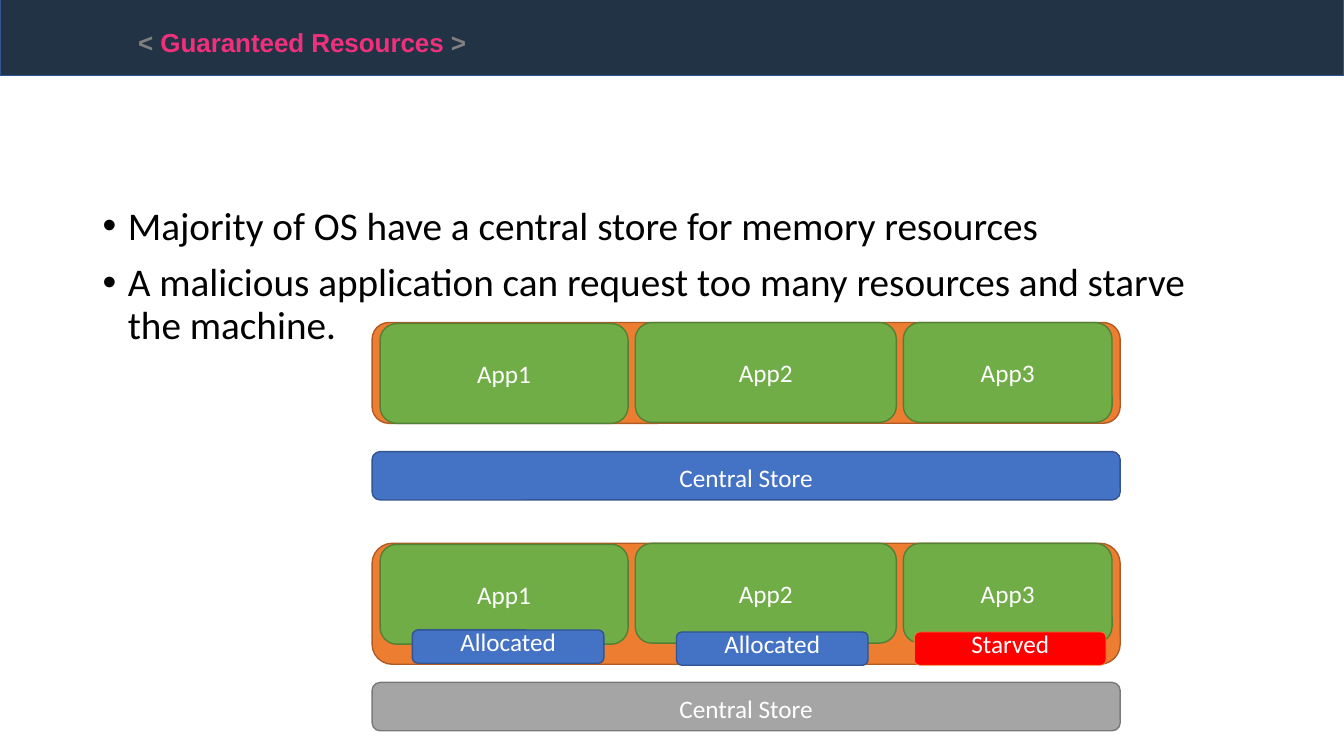
from lxml.etree import SubElement
from pptx import Presentation
from pptx.dml.color import RGBColor
from pptx.enum.shapes import MSO_SHAPE
from pptx.enum.text import MSO_ANCHOR, MSO_AUTO_SIZE, PP_ALIGN
from pptx.oxml.ns import qn
from pptx.util import Inches, Pt

COLORS = {
    "bar": "223346", "blue": "4472C4", "blue_line": "325491",
    "orange": "ED7D31", "orange_line": "AF5C24",
    "green": "70AD47", "green_line": "538035",
    "gray": "A5A5A5", "gray_line": "7A7A7A", "red": "FF0000",
    "pink": "F1307C", "bracket": "808080", "black": "000000", "white": "FFFFFF",
}
MACHINE_LEFT, MACHINE_WIDTH = 3.69, 7.42
APPS = [("App1", 3.77, 0.01, 2.46), ("App2", 6.3, 0, 2.59), ("App3", 8.96, 0, 2.07)]
GRANTS = [
    ("Allocated", 4.09, 6.25, "blue", "blue_line", 1),
    ("Allocated", 6.71, 6.27, "blue", "blue_line", 1),
    ("Starved", 9.07, 6.27, "red", "orange", 0.5),
]
BULLETS = [
    "Majority of OS have a central store for memory resources",
    "A malicious application can request too many resources and starve the machine.",
]


def rgb(name):
    return RGBColor.from_string(COLORS[name])


def style_font(font, family, size, color):
    font.name = family
    font.size = Pt(size)
    font.color.rgb = rgb(color)


def add_box(slide, bounds, fill, line, label="", anchor=MSO_ANCHOR.BOTTOM,
            kind=MSO_SHAPE.ROUNDED_RECTANGLE, line_width=1):
    box = slide.shapes.add_shape(kind, *map(Inches, bounds))
    box.shadow.inherit = False
    box.fill.solid()
    box.fill.fore_color.rgb = rgb(fill)
    box.line.color.rgb = rgb(line)
    box.line.width = Pt(line_width)
    if label:
        frame = box.text_frame
        frame.text = label
        frame.vertical_anchor = anchor
        frame.paragraphs[0].alignment = PP_ALIGN.CENTER
        style_font(frame.paragraphs[0].runs[0].font, "Calibri", 18, "white")
    return box


def add_header(slide):
    title = slide.shapes.title
    bar = add_box(slide, (0, -0.03, 13.33, 0.78), "bar", "blue_line",
                  kind=MSO_SHAPE.RECTANGLE)
    title.element.addprevious(bar.element)

    title.left, title.top = Inches(1.27), Inches(0.16)
    title.width, title.height = Inches(3.99), Inches(0.64)
    frame = title.text_frame
    frame.word_wrap = False
    frame.auto_size = MSO_AUTO_SIZE.SHAPE_TO_FIT_TEXT
    frame.vertical_anchor = MSO_ANCHOR.TOP
    heading = frame.paragraphs[0]
    heading.alignment = PP_ALIGN.LEFT
    for words, color in [("< ", "bracket"), ("Guaranteed Resources ", "pink"),
                         (">", "bracket")]:
        part = heading.add_run()
        part.text = words
        style_font(part.font, "Arial", 32, color)
        part.font.bold = True
        part._r.get_or_add_rPr().set("baseline", "30000")


def add_bullets(slide):
    body = slide.shapes.add_textbox(Inches(0.92), Inches(2), Inches(11.5), Inches(4.76))
    frame = body.text_frame
    frame.word_wrap = True
    for index, sentence in enumerate(BULLETS):
        paragraph = frame.add_paragraph() if index else frame.paragraphs[0]
        paragraph.text = sentence
        paragraph.line_spacing = 0.9
        if index:
            paragraph.space_before = Pt(10)
        properties = paragraph._p.get_or_add_pPr()
        properties.set("marL", str(Inches(0.25)))
        properties.set("indent", str(-Inches(0.25)))
        SubElement(properties, qn("a:buFont"), typeface="Arial")
        SubElement(properties, qn("a:buChar"), char="•")
        style_font(paragraph.runs[0].font, "Calibri", 28, "black")


def add_machine(slide, top, height, store_top, store_fill, store_line):
    """Draw a central store and the machine whose apps draw on it."""
    add_box(slide, (MACHINE_LEFT, store_top, MACHINE_WIDTH, 0.48),
            store_fill, store_line, "Central Store")
    add_box(slide, (MACHINE_LEFT, top, MACHINE_WIDTH, height), "orange", "orange_line")
    for app, left, drop, width in APPS:
        add_box(slide, (left, top + drop, width, 0.99), "green", "green_line",
                app, MSO_ANCHOR.MIDDLE)


def main():
    deck = Presentation()
    deck.slide_width, deck.slide_height = Inches(13.33), Inches(7.5)
    slide = deck.slides.add_slide(deck.slide_layouts[5])
    add_header(slide)
    add_bullets(slide)
    add_machine(slide, 3.2, 1, 4.48, "blue", "blue_line")
    add_machine(slide, 5.39, 1.2, 6.77, "gray", "gray_line")
    for status, left, top, fill, line, line_width in GRANTS:
        add_box(slide, (left, top, 1.9, 0.33), fill, line, status, line_width=line_width)
    deck.save("out.pptx")


if __name__ == "__main__":
    main()
